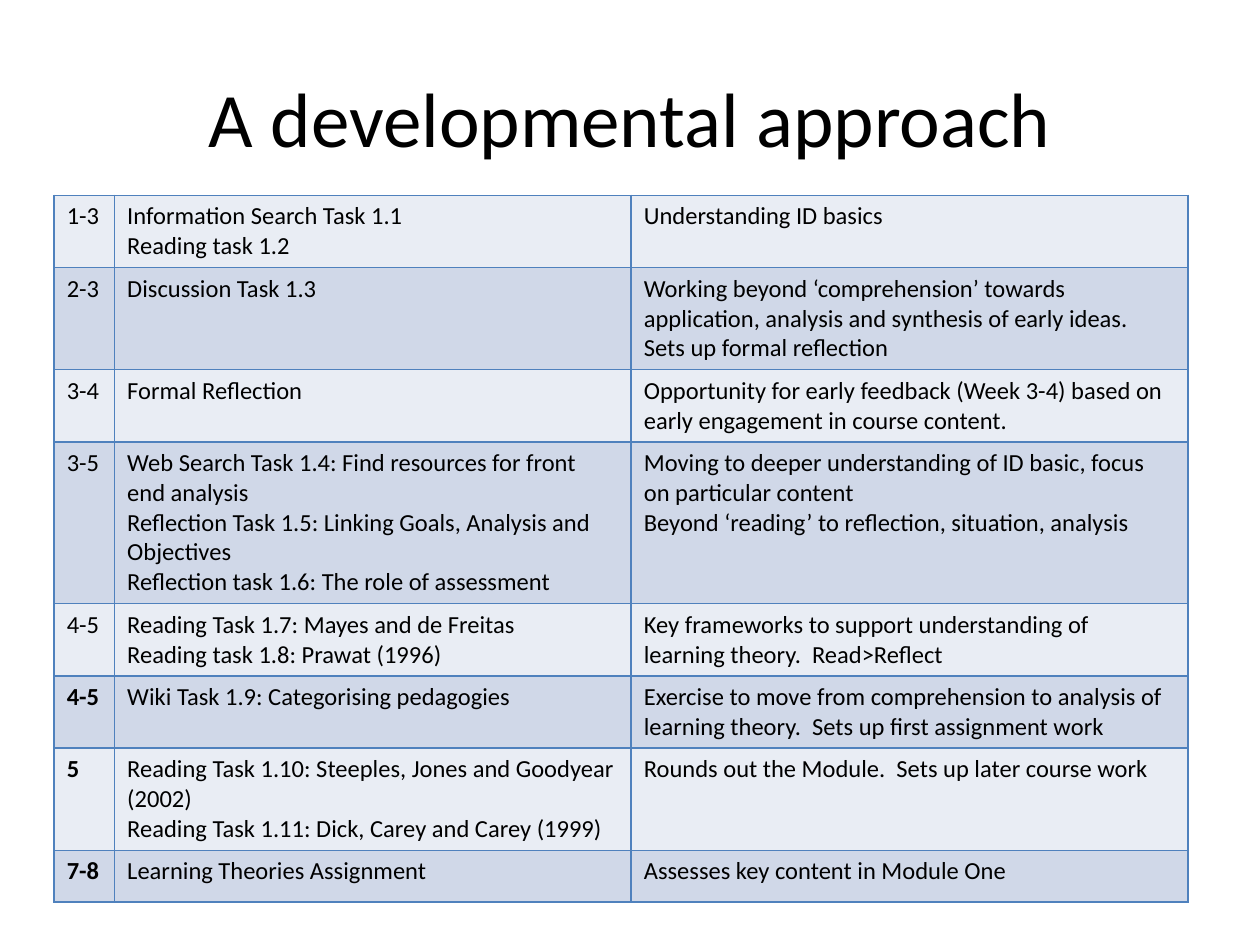
from dataclasses import dataclass

import lxml.etree
import pptx
import pptx.dml.color
import pptx.enum.text
import pptx.oxml.ns
import pptx.util


@dataclass(frozen=True)
class Theme:
    font: str = "Calibri"
    title_size: int = 44
    cell_size: int = 14
    ink: str = "000000"
    border: str = "4F81BD"
    border_width: int = 1
    bands: tuple = ("E9EDF4", "D0D8E8")


SCHEDULE = [
    ("1-3", "Information Search Task 1.1\nReading task 1.2", "Understanding ID basics"),
    ("2-3", "Discussion Task 1.3",
     "Working beyond ‘comprehension’ towards application, analysis and synthesis "
     "of early ideas.  Sets up formal reflection"),
    ("3-4", "Formal Reflection",
     "Opportunity for early feedback (Week 3-4) based on early engagement in course content."),
    ("3-5",
     "Web Search Task 1.4: Find resources for front end analysis\n"
     "Reflection Task 1.5: Linking Goals, Analysis and Objectives\n"
     "Reflection task 1.6: The role of assessment",
     "Moving to deeper understanding of ID basic, focus on particular content\n"
     "Beyond ‘reading’ to reflection, situation, analysis"),
    ("4-5", "Reading Task 1.7: Mayes and de Freitas\nReading task 1.8: Prawat (1996)",
     "Key frameworks to support understanding of learning theory.  Read>Reflect"),
    ("4-5", "Wiki Task 1.9: Categorising pedagogies",
     "Exercise to move from comprehension to analysis of learning theory.  "
     "Sets up first assignment work"),
    ("5",
     "Reading Task 1.10: Steeples, Jones and Goodyear (2002)\n"
     "Reading Task 1.11: Dick, Carey and Carey (1999)",
     "Rounds out the Module.  Sets up later course work"),
    ("7-8", "Learning Theories Assignment", "Assesses key content in Module One"),
]
FIRST_BOLD_ROW = 5


class Deck:
    """Builds slides in one theme, with positions given as shares of the slide."""

    def __init__(self, theme, width=10, height=7.5):
        self.theme = theme
        self.prs = pptx.Presentation()
        self.prs.slide_width = pptx.util.Inches(width)
        self.prs.slide_height = pptx.util.Inches(height)
        self.s = None

    def add_slide(self):
        self.s = self.prs.slides.add_slide(self.prs.slide_layouts[5])

    def x(self, share):
        return round(self.prs.slide_width * share)

    def y(self, share):
        return round(self.prs.slide_height * share)

    def format_text(self, tf, size, bold=False, align=pptx.enum.text.PP_ALIGN.LEFT):
        for p in tf.paragraphs:
            p.alignment = align
            for r in p.runs:
                r.font.name = self.theme.font
                r.font.size = pptx.util.Pt(size)
                r.font.bold = bold
                r.font.color.rgb = pptx.dml.color.RGBColor.from_string(self.theme.ink)

    def title(self, text, left, top, width, height):
        sp = self.s.shapes.title
        sp.left, sp.top = self.x(left), self.y(top)
        sp.width, sp.height = self.x(width), self.y(height)
        tf = sp.text_frame
        tf.text = text
        tf.vertical_anchor = pptx.enum.text.MSO_ANCHOR.MIDDLE
        self.format_text(tf, self.theme.title_size, align=pptx.enum.text.PP_ALIGN.CENTER)

    def borders(self, cell):
        qn = pptx.oxml.ns.qn
        tcPr = cell._tc.get_or_add_tcPr()
        width = str(pptx.util.Pt(self.theme.border_width))
        for i, side in enumerate(("lnL", "lnR", "lnT", "lnB")):
            ln = lxml.etree.Element(qn(f"a:{side}"), w=width)
            fill = lxml.etree.SubElement(ln, qn("a:solidFill"))
            lxml.etree.SubElement(fill, qn("a:srgbClr"), val=self.theme.border)
            tcPr.insert(i, ln)

    def table(self, rows, left, top, col_widths, row_height, first_bold):
        table = self.s.shapes.add_table(
            len(rows), len(col_widths), self.x(left), self.y(top),
            self.x(sum(col_widths)), self.y(row_height * len(rows))).table
        for column, share in zip(table.columns, col_widths):
            column.width = self.x(share)
        for i, texts in enumerate(rows):
            table.rows[i].height = self.y(row_height)
            band = self.theme.bands[i % len(self.theme.bands)]
            for j, text in enumerate(texts):
                cell = table.cell(i, j)
                cell.fill.solid()
                cell.fill.fore_color.rgb = pptx.dml.color.RGBColor.from_string(band)
                cell.text_frame.text = text
                self.format_text(cell.text_frame, self.theme.cell_size,
                                 bold=j == 0 and i >= first_bold)
                self.borders(cell)


def main():
    deck = Deck(Theme())
    deck.add_slide()
    deck.title("A developmental approach", 0.05, 0.04, 0.9, 1 / 6)
    deck.table(SCHEDULE, 0.043, 1.55 / 7.5, (0.048, 0.41, 0.442), 0.41 / 7.5, FIRST_BOLD_ROW)
    deck.prs.save("out.pptx")


if __name__ == "__main__":
    main()
